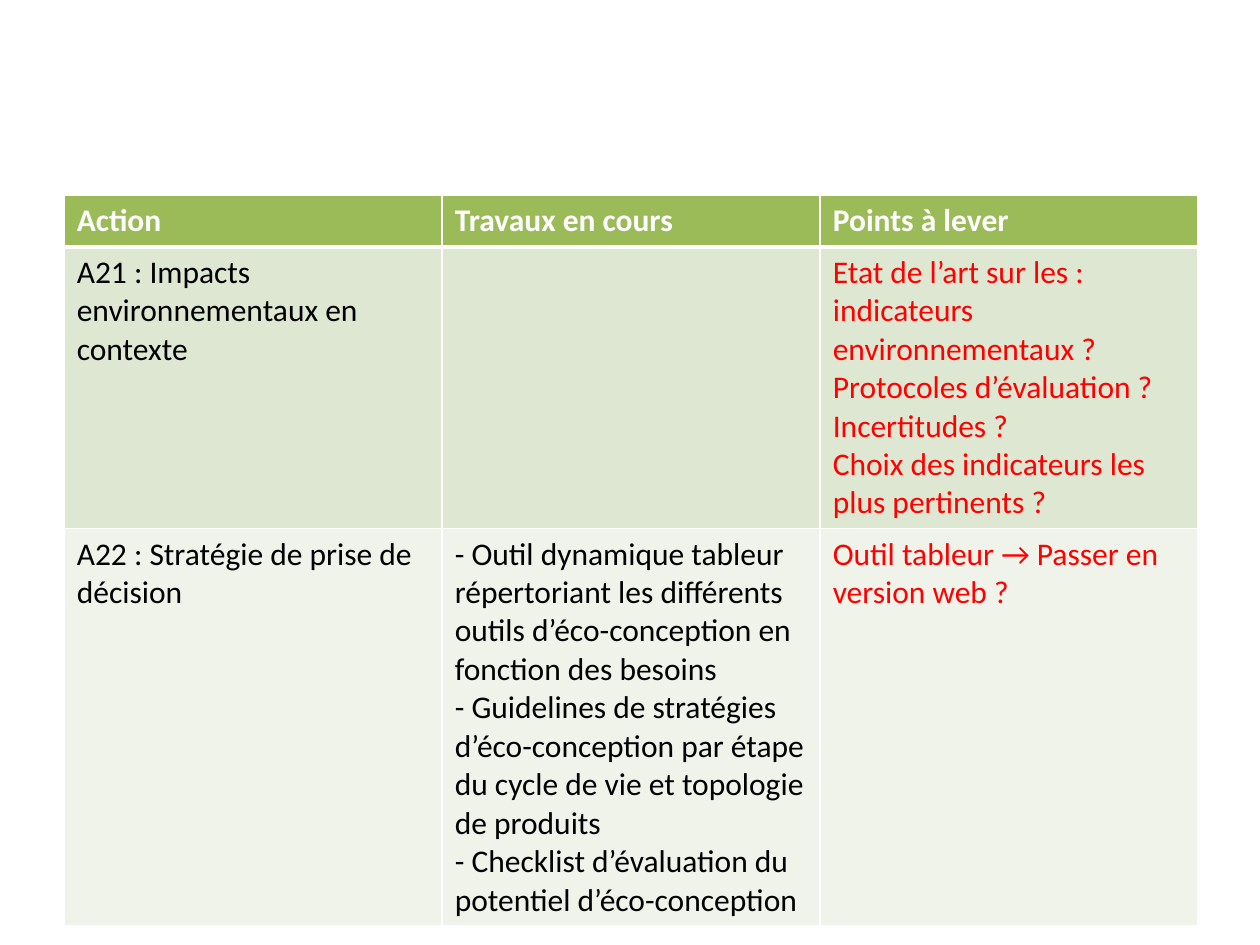
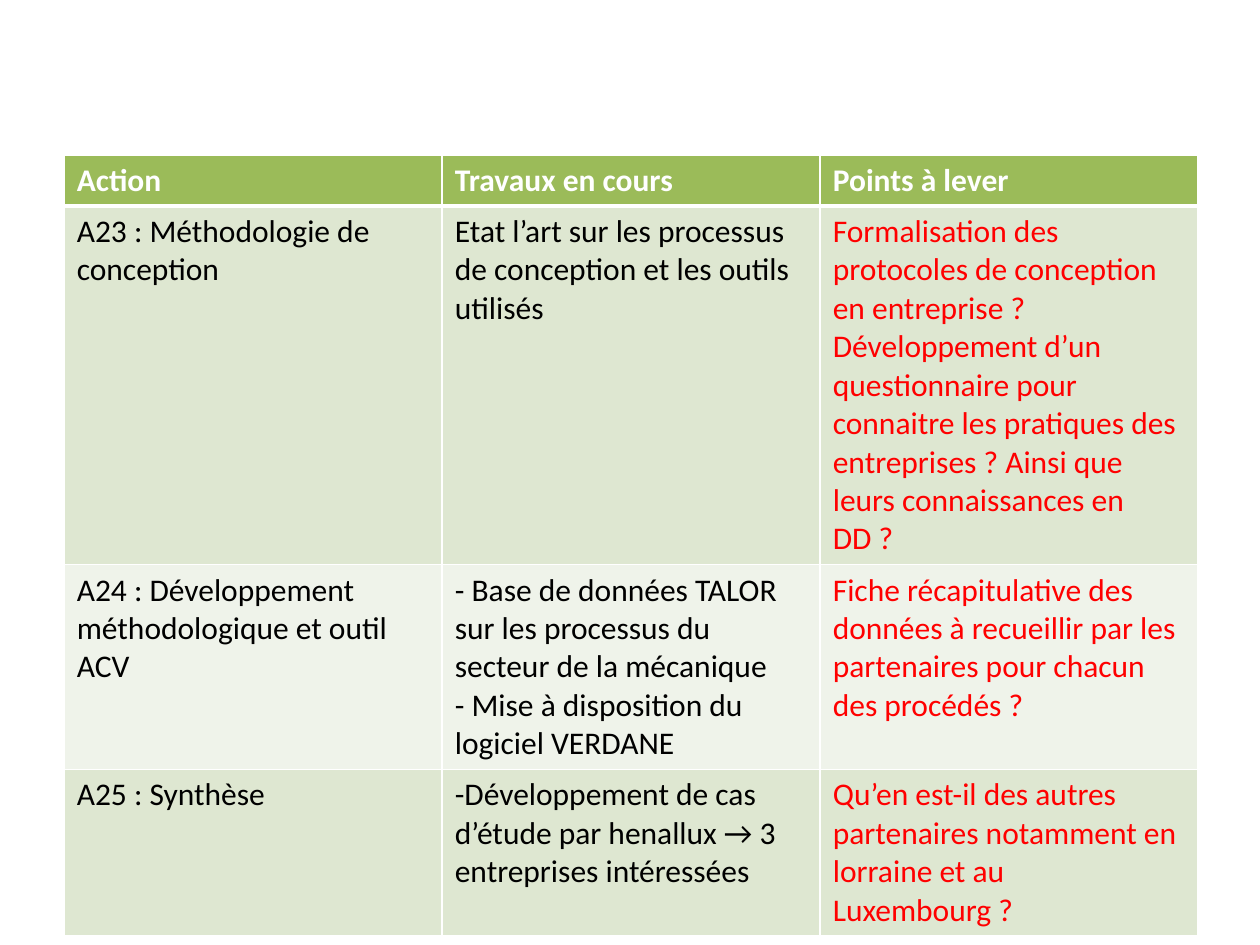
from lxml import etree
from pptx import Presentation
from pptx.dml.color import RGBColor
from pptx.oxml.ns import qn
from pptx.util import Inches, Pt

COLORS = {
    "head": "9BBB59",
    "dark": "DEE7D1",
    "light": "EFF3EA",
    "white": "FFFFFF",
    "black": "000000",
    "red": "FF0000",
}
HEADS = ("Action", "Travaux en cours", "Points à lever")
LEFT = 0.51
COL = 3


class Deck:
    font = "Calibri"
    size = 18

    def __init__(self):
        self.prs = Presentation()
        self.prs.slide_width = Inches(10)
        self.prs.slide_height = Inches(7.5)
        self.slide = None

    def page(self):
        self.slide = self.prs.slides.add_slide(self.prs.slide_layouts[6])

    def edge(self, cell, side, width):
        line = etree.SubElement(cell._tc.get_or_add_tcPr(), qn("a:ln" + side))
        line.set("w", str(Pt(width)))
        fill = etree.SubElement(line, qn("a:solidFill"))
        etree.SubElement(fill, qn("a:srgbClr")).set("val", COLORS["white"])

    def label(self, cell, paras, color, bold):
        frame = cell.text_frame
        for i, text in enumerate(paras):
            para = frame.add_paragraph() if i else frame.paragraphs[0]
            run = para.add_run()
            run.text = text
            run.font.name = self.font
            run.font.size = Pt(self.size)
            run.font.bold = bold
            run.font.color.rgb = RGBColor.from_string(COLORS[color])

    def cell(self, cell, paras, row, col):
        widths = {"L": 1, "R": 1, "T": 3 if row == 1 else 1, "B": 1 if row else 3}
        for side, width in widths.items():
            self.edge(cell, side, width)
        fill = "head" if row == 0 else ("dark" if row % 2 else "light")
        cell.fill.solid()
        cell.fill.fore_color.rgb = RGBColor.from_string(COLORS[fill])
        color = "white" if row == 0 else ("red" if col == 2 else "black")
        self.label(cell, paras, color, row == 0)

    def table(self, top, heights, body):
        rows = [[[head] for head in HEADS]] + body
        count = len(HEADS)
        table = self.slide.shapes.add_table(
            len(rows), count, Inches(LEFT), Inches(top),
            Inches(COL * count), Inches(sum(heights)),
        ).table
        for col in table.columns:
            col.width = Inches(COL)
        for r, (height, row) in enumerate(zip(heights, rows)):
            table.rows[r].height = Inches(height)
            for c, paras in enumerate(row):
                self.cell(table.cell(r, c), paras, r, c)


def main():
    deck = Deck()

    deck.page()
    deck.table(1.55, [0.41, 2.2, 3.1], [
        [
            ["A21 : Impacts environnementaux en contexte"],
            [],
            [
                "Etat de l’art sur les : indicateurs environnementaux ? "
                "Protocoles d’évaluation ? Incertitudes ?",
                "Choix des indicateurs les plus pertinents ?",
            ],
        ],
        [
            ["A22 : Stratégie de prise de décision"],
            [
                "- Outil dynamique tableur répertoriant les différents "
                "outils d’éco-conception en fonction des besoins",
                "- Guidelines de stratégies d’éco-conception par étape "
                "du cycle de vie et topologie de produits",
                "- Checklist d’évaluation du potentiel d’éco-conception",
            ],
            ["Outil tableur → Passer en version web ?"],
        ],
    ])

    deck.page()
    deck.table(1.23, [0.39, 2.71, 1.55, 1.26], [
        [
            ["A23 : Méthodologie de conception"],
            ["Etat l’art sur les processus de conception et les outils utilisés"],
            [
                "Formalisation des protocoles de conception en entreprise ? "
                "Développement d’un questionnaire pour connaitre les pratiques "
                "des entreprises ? Ainsi que leurs connaissances en DD ?",
            ],
        ],
        [
            ["A24 : Développement méthodologique et outil ACV"],
            [
                "- Base de données TALOR sur les processus du secteur "
                "de la mécanique",
                "- Mise à disposition du logiciel VERDANE",
            ],
            [
                "Fiche récapitulative des données à recueillir par les "
                "partenaires pour chacun des procédés ?",
            ],
        ],
        [
            ["A25 : Synthèse"],
            ["-Développement de cas d’étude par henallux → 3 entreprises intéressées"],
            [
                "Qu’en est-il des autres partenaires notamment en lorraine "
                "et au Luxembourg ?",
            ],
        ],
    ])

    deck.prs.save("out.pptx")


if __name__ == "__main__":
    main()
